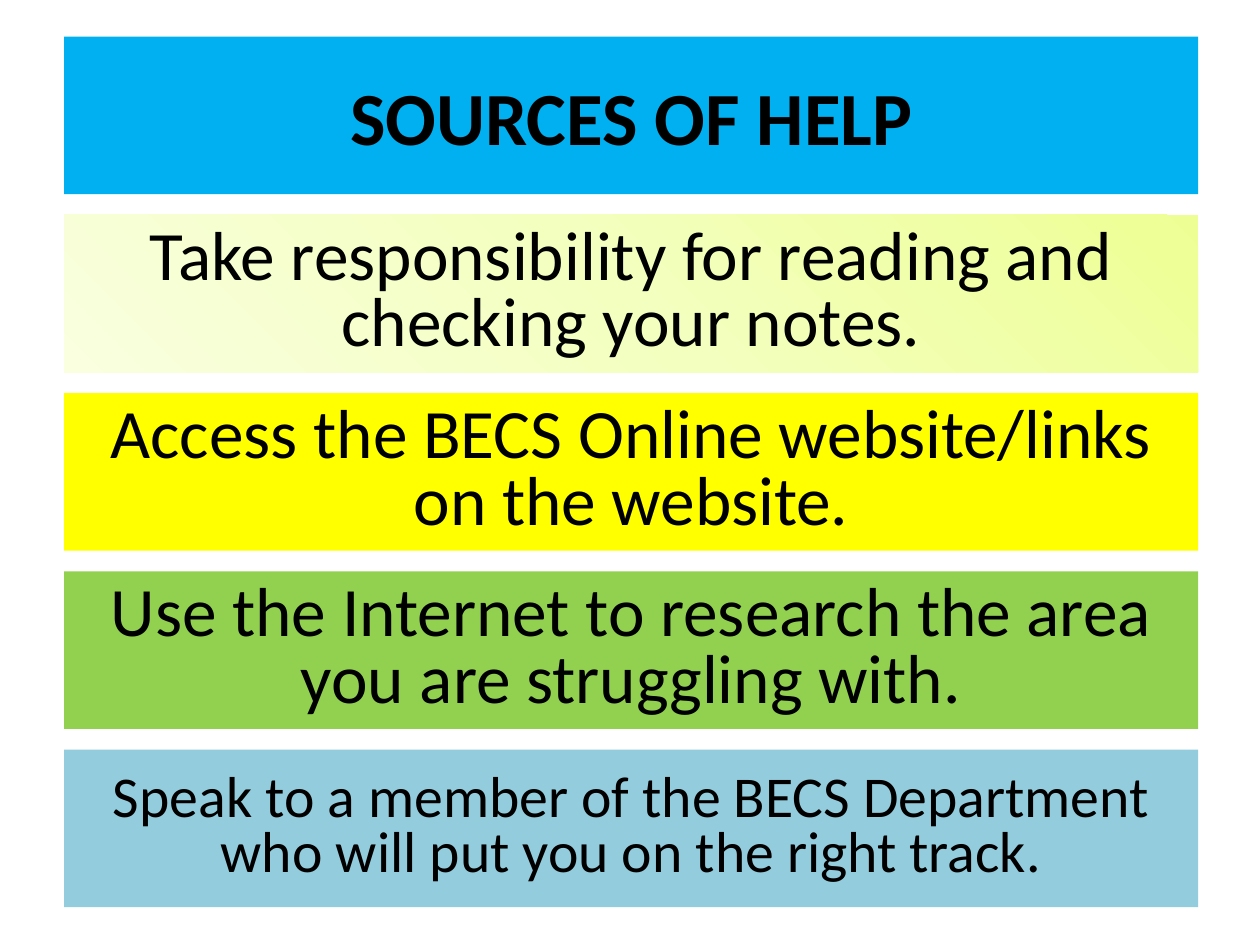
from copy import deepcopy

from pptx import Presentation
from pptx.dml.color import RGBColor
from pptx.enum import shapes, text
from pptx.oxml.ns import qn
from pptx.util import Inches, Pt

COLORS = {
    "text": "000000",
    "blue": "00B0F0",
    "yellow": "FFFF00",
    "green": "92D050",
    "aqua": "93CDDD",
}
LIME = ["EDFF94", "F3FFBE", "F9FFDF"]  # gradient, top right to bottom left

# Wording, fill, text size
TITLE = ("SOURCES OF HELP", COLORS["blue"], 42.9)
TIPS = [
    ("Take responsibility for reading and checking your notes.", LIME, 39.6),
    ("Access the BECS Online website/links on the website.", COLORS["yellow"], 39.6),
    ("Use the Internet to research the area you are struggling with.", COLORS["green"], 39.6),
    ("Speak to a member of the BECS Department who will put you on the right track.",
     COLORS["aqua"], 33),
]


def fill_gradient(sp, colors, angle):
    """Fill a shape with evenly spaced colour stops; angle is counter-clockwise."""
    sp.fill.gradient()
    sp.fill.gradient_angle = angle
    stops = sp._element.spPr.find(qn("a:gradFill")).find(qn("a:gsLst"))
    while len(stops) < len(colors):
        stops.append(deepcopy(stops[0]))
    for i, (stop, color) in enumerate(zip(sp.fill.gradient_stops, colors)):
        stop.position = i / (len(colors) - 1)
        stop.color.rgb = RGBColor.from_string(color)


def add_bar(s, left, top, width, height, label, fill, size, bold=False, spacing=None):
    sp = s.shapes.add_shape(shapes.MSO_SHAPE.RECTANGLE, left, top, width, height)
    sp.shadow.inherit = False
    sp.line.fill.background()
    if isinstance(fill, list):
        fill_gradient(sp, fill, 225)
    else:
        sp.fill.solid()
        sp.fill.fore_color.rgb = RGBColor.from_string(fill)

    tf = sp.text_frame
    tf.word_wrap = True
    tf.vertical_anchor = text.MSO_ANCHOR.MIDDLE
    tf.text = label
    p = tf.paragraphs[0]
    p.alignment = text.PP_ALIGN.CENTER
    p.line_spacing = spacing
    font = p.runs[0].font
    font.name, font.size, font.bold = "Calibri", Pt(size), bold
    font.color.rgb = RGBColor.from_string(COLORS["text"])


def add_help_list(s, left, top, width, height, bar_height):
    """Stack the title and the tips with equal gaps to fill the box."""
    pitch = (height - bar_height) / len(TIPS)
    # Title bar
    add_bar(s, left, top, width, bar_height, *TITLE, bold=True)
    # Tip bars
    for i, tip in enumerate(TIPS, start=1):
        add_bar(s, left, int(top + i * pitch), width, bar_height, *tip, spacing=0.8)


def main():
    prs = Presentation()
    prs.slide_width, prs.slide_height = Inches(10), Inches(7.5)
    s = prs.slides.add_slide(prs.slide_layouts[6])
    add_help_list(s, Inches(0.51), Inches(0.29), Inches(9), Inches(6.91), Inches(1.25))
    prs.save("out.pptx")


if __name__ == "__main__":
    main()
